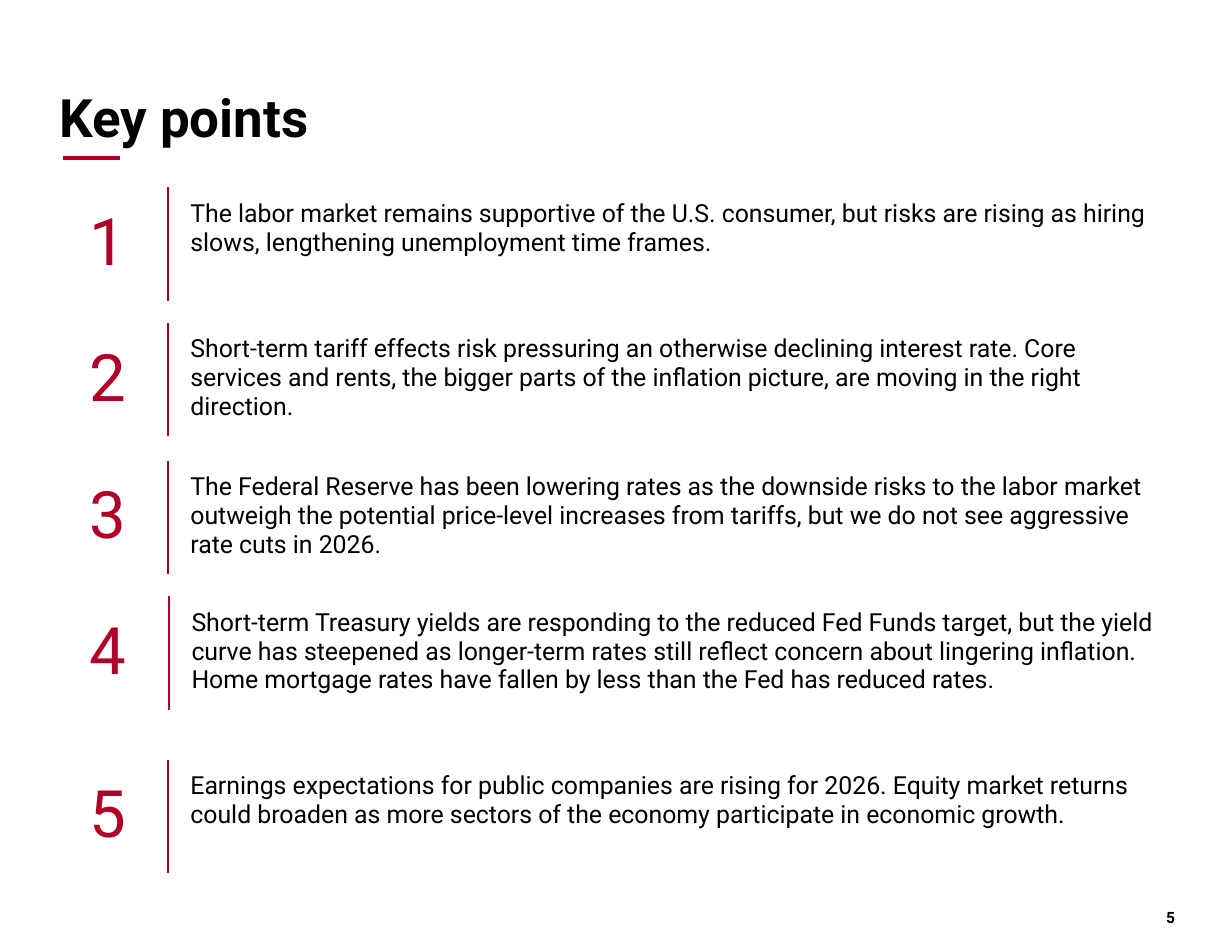
from dataclasses import dataclass

from lxml.etree import SubElement
from pptx import Presentation
from pptx.dml.color import RGBColor
from pptx.enum.shapes import MSO_CONNECTOR as Connector
from pptx.enum.text import MSO_ANCHOR as Anchor, PP_ALIGN as Align
from pptx.oxml import parse_xml
from pptx.oxml.ns import nsdecls, qn
from pptx.util import Inches, Pt


@dataclass(frozen=True)
class Theme:
    font: str = "Roboto"
    accent: str = "B00027"
    text: str = "000000"
    title_size: int = 34
    number_size: int = 42
    body_size: int = 16
    page_size: int = 10


THEME = Theme()

# Left, top, number column width, text column width, wording
KEY_POINTS = [
    (0.42, 1.68, 1.08, 9.07,
     "The labor market remains supportive of the U.S. consumer, but risks are "
     "rising as hiring slows, lengthening unemployment time frames."),
    (0.42, 2.89, 1.08, 9.07,
     "Short-term tariff effects risk pressuring an otherwise declining interest "
     "rate. Core services and rents, the bigger parts of the inflation picture, "
     "are moving in the right direction."),
    (0.42, 4.12, 1.08, 9.07,
     "The Federal Reserve has been lowering rates as the downside risks to the "
     "labor market outweigh the potential price-level increases from tariffs, "
     "but we do not see aggressive rate cuts in 2026."),
    (0.41, 5.33, 1.1, 9.16,
     "Short-term Treasury yields are responding to the reduced Fed Funds target, "
     "but the yield curve has steepened as longer-term rates still reflect "
     "concern about lingering inflation. Home mortgage rates have fallen by less "
     "than the Fed has reduced rates."),
    (0.42, 6.79, 1.08, 9.07,
     "Earnings expectations for public companies are rising for 2026. Equity "
     "market returns could broaden as more sectors of the economy participate "
     "in economic growth."),
]
ROW_HEIGHT = 1


def write(text_frame, text, size, color, bold=False, align=Align.LEFT):
    text_frame.text = text
    paragraph = text_frame.paragraphs[0]
    paragraph.alignment = align
    font = paragraph.runs[0].font
    font.name, font.size, font.bold = THEME.font, Pt(size), bold
    font.color.rgb = RGBColor.from_string(color)


def add_text(slide, box, text, size, bottom=0, align=Align.LEFT):
    text_frame = slide.shapes.add_textbox(*map(Inches, box)).text_frame
    text_frame.word_wrap = True
    text_frame.vertical_anchor = Anchor.BOTTOM
    text_frame.margin_left = text_frame.margin_right = text_frame.margin_top = 0
    text_frame.margin_bottom = Inches(bottom)
    write(text_frame, text, size, THEME.text, bold=True, align=align)


def add_rule(slide, left, right, y, width):
    rule = slide.shapes.add_connector(
        Connector.STRAIGHT, Inches(left), Inches(y), Inches(right), Inches(y))
    rule.line.color.rgb = RGBColor.from_string(THEME.accent)
    rule.line.width = Pt(width)
    SubElement(rule._element.spPr, qn("a:effectLst"))


def set_border(cell, side):
    border = parse_xml(
        f'<a:ln{side} {nsdecls("a")} w="{Pt(1)}"><a:solidFill>'
        f'<a:srgbClr val="{THEME.accent}"/></a:solidFill></a:ln{side}>')
    cell._tc.get_or_add_tcPr().insert(0, border)


def format_cell(cell, side_margin, end_margin, border_side):
    cell.margin_left = cell.margin_right = Inches(side_margin)
    cell.margin_top = cell.margin_bottom = Inches(end_margin)
    cell.fill.background()
    set_border(cell, border_side)


def add_key_point(slide, number, left, top, number_width, text_width, text):
    table = slide.shapes.add_table(
        1, 2, Inches(left), Inches(top),
        Inches(number_width + text_width), Inches(ROW_HEIGHT)).table
    table.first_row = table.horz_banding = False
    table.columns[0].width = Inches(number_width)
    table.columns[1].width = Inches(text_width)

    number_cell, text_cell = table.cell(0, 0), table.cell(0, 1)
    write(number_cell.text_frame, str(number), THEME.number_size, THEME.accent,
          align=Align.CENTER)
    format_cell(number_cell, 0.1, 0.15, "R")
    write(text_cell.text_frame, text, THEME.body_size, THEME.text)
    format_cell(text_cell, 0.2, 0.1, "L")


def main():
    presentation = Presentation()
    presentation.slide_width = Inches(11)
    presentation.slide_height = Inches(8.5)
    slide = presentation.slides.add_slide(presentation.slide_layouts[6])

    # Heading
    add_rule(slide, 0.56, 1.07, 1.41, 3)
    add_text(slide, (0.53, 0.55, 9.99, 0.9), "Key points", THEME.title_size,
             bottom=0.13)

    # Numbered points
    for number, point in enumerate(KEY_POINTS, start=1):
        add_key_point(slide, number, *point)

    # Page number
    add_text(slide, (10.14, 7.92, 0.35, 0.35), "5", THEME.page_size,
             align=Align.RIGHT)

    presentation.save("out.pptx")


if __name__ == "__main__":
    main()
